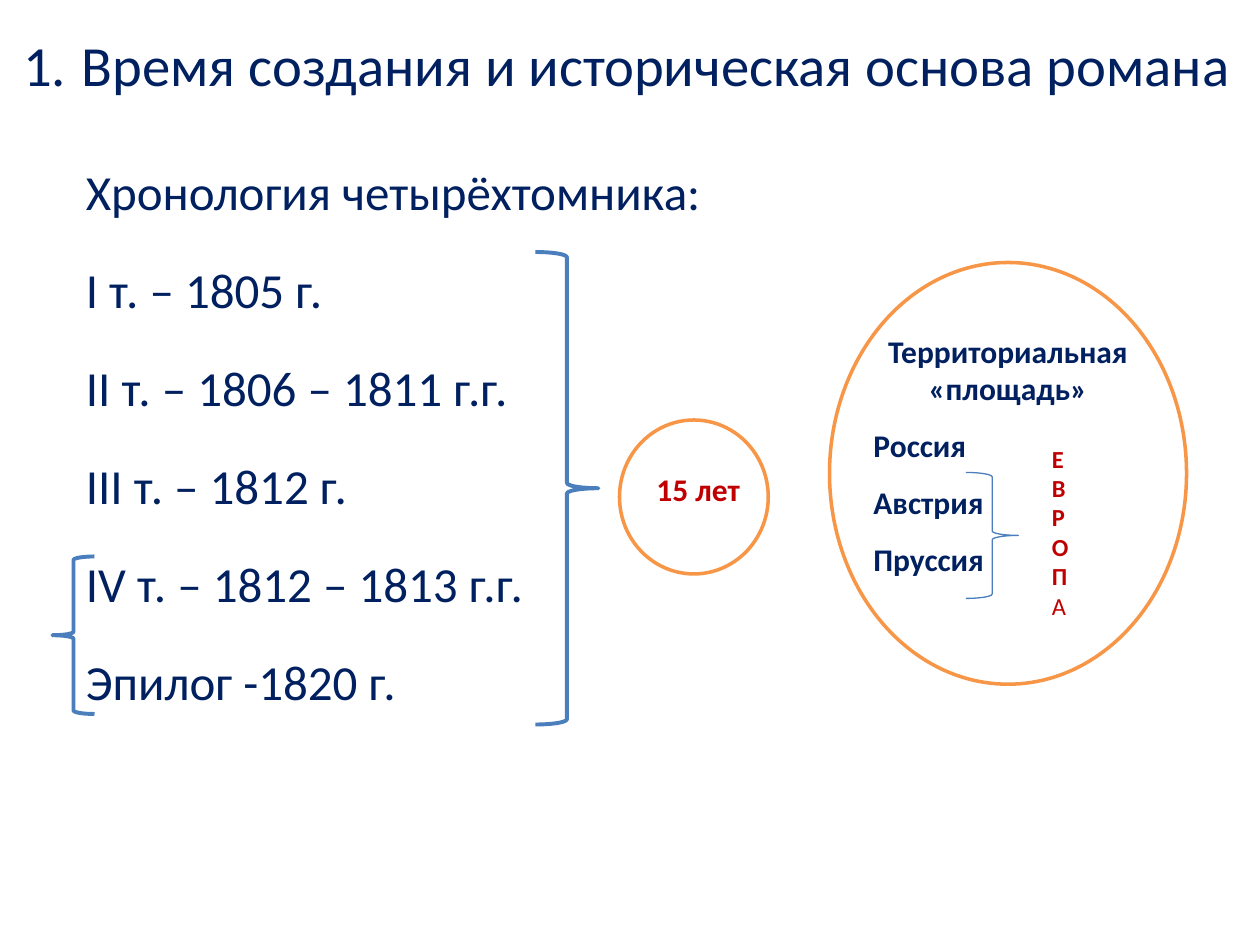
from pptx import Presentation
from pptx.dml.color import RGBColor
from pptx.enum.shapes import MSO_SHAPE as Shape
from pptx.enum.text import MSO_ANCHOR as Anchor, MSO_AUTO_SIZE as AutoSize, PP_ALIGN as Align
from pptx.util import Pt

NAVY = RGBColor(0x00, 0x20, 0x60)
RED = RGBColor(0xC0, 0x00, 0x00)
BLUE = RGBColor(0x4B, 0x7E, 0xBC)
ORANGE = RGBColor(0xF7, 0x96, 0x46)
WHITE = RGBColor(0xFF, 0xFF, 0xFF)


def place(bounds):
    return [Pt(length) for length in bounds]


def set_font(font, size, color, bold=False):
    font.name = "Calibri"
    font.size = Pt(size)
    font.color.rgb = color
    font.bold = bold


def add_title(page):
    title = page.shapes.title
    title.left, title.top, title.width, title.height = place((6, 6, 720, 44.6))
    frame = title.text_frame
    frame.auto_size = AutoSize.NONE
    frame.vertical_anchor = Anchor.TOP
    para = frame.paragraphs[0]
    para.alignment = Align.LEFT
    parts = (("1.", 32.4), (" ", 39.6),
             ("Время создания и историческая основа романа", 32.4))
    for text, size in parts:
        span = para.add_run()
        span.text = text
        set_font(span.font, size, NAVY)


def add_text(page, bounds, lines, size, color, bold=False, align=Align.LEFT,
             spacing=1.0, before=0):
    box = page.shapes.add_textbox(*place(bounds))
    frame = box.text_frame
    frame.word_wrap = True
    for index, line in enumerate(lines):
        para = frame.add_paragraph() if index else frame.paragraphs[0]
        para.text = line
        para.alignment = align
        para.line_spacing = spacing
        if index and before:
            para.space_before = Pt(before)
        set_font(para.font, size, color, bold)
    return frame.paragraphs


def add_outline(page, kind, bounds, color, width, fill=None):
    shape = page.shapes.add_shape(kind, *place(bounds))
    shape.shadow.inherit = False
    shape.line.color.rgb = color
    shape.line.width = Pt(width)
    if fill is None:
        shape.fill.background()
    else:
        shape.fill.solid()
        shape.fill.fore_color.rgb = fill


def main():
    deck = Presentation()
    deck.slide_width, deck.slide_height = Pt(720), Pt(540)
    page = deck.slides.add_slide(deck.slide_layouts[5])
    add_title(page)

    # Chronology of the volumes
    chronology = ("Хронология четырёхтомника:", "I т. – 1805 г.",
                  "II т. – 1806 – 1811 г.г.", "III т. – 1812 г.",
                  "IV т. – 1812 – 1813 г.г.", "Эпилог -1820 г.")
    add_text(page, (42, 72, 648, 356), chronology, 28, NAVY, spacing=1.5, before=5.6)
    add_outline(page, Shape.LEFT_BRACE, (30, 318, 24, 90), BLUE, 2.25)
    add_outline(page, Shape.RIGHT_BRACE, (306, 144, 36, 270), BLUE, 2.25)

    # Total time span
    add_outline(page, Shape.OVAL, (354, 240, 85, 88), ORANGE, 2, WHITE)
    add_text(page, (360, 265, 78, 29), ["15 лет"], 18, RED, True, Align.CENTER)

    # Territory
    add_outline(page, Shape.OVAL, (474, 150, 204, 241), ORANGE, 2, WHITE)
    territory = ("Территориальная «площадь»", "Россия", "Австрия", "Пруссия")
    paras = add_text(page, (492, 186, 168, 258), territory, 18, NAVY, True, spacing=1.5)
    paras[0].alignment = Align.CENTER
    paras[0].line_spacing = 1.0
    add_outline(page, Shape.RIGHT_BRACE, (552, 270, 30, 72), BLUE, 0.75)

    # Europe, one letter a line
    letters = add_text(page, (594, 250, 30, 117), "ЕВРОПА", 14, RED, True)
    letters[-1].font.bold = False

    deck.save("out.pptx")


if __name__ == "__main__":
    main()
